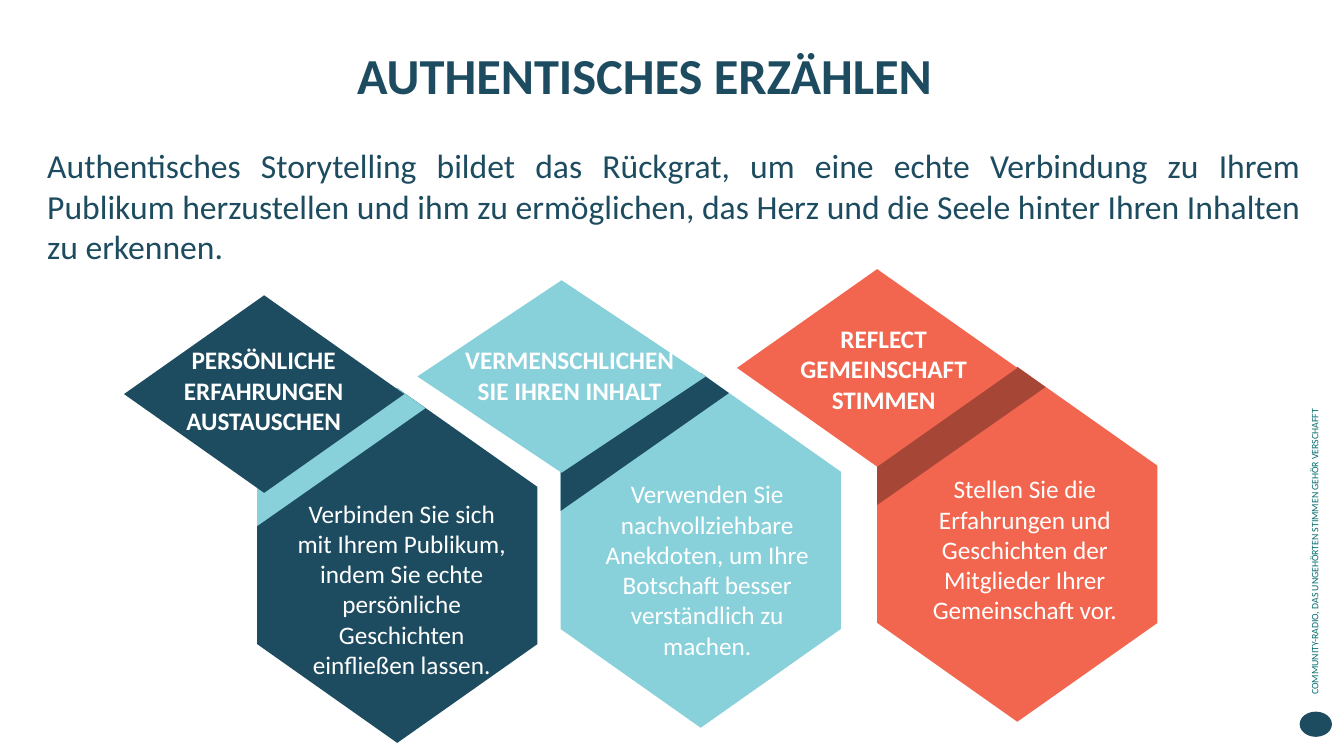
from dataclasses import dataclass

from pptx import Presentation
from pptx.dml.color import RGBColor
from pptx.enum.shapes import MSO_SHAPE as Preset
from pptx.enum.text import MSO_ANCHOR as Anchor, MSO_AUTO_SIZE as AutoSize, PP_ALIGN as Align
from pptx.util import Inches, Pt


@dataclass(frozen=True)
class Theme:
    font: str = "Calibri"
    navy: str = "1D4C60"
    aqua: str = "88D1DA"
    coral: str = "F26650"
    rust: str = "A54637"
    teal: str = "066C6D"
    white: str = "FFFFFF"
    title_size: int = 36
    intro_size: int = 24
    card_size: int = 18
    motto_size: int = 7


theme = Theme()


def write(shape, text, box, size, color, bold=False, align=Align.CENTER):
    """Place a text shape and format all its paragraphs."""
    for name, value in zip(("left", "top", "width", "height"), box):
        setattr(shape, name, Inches(value))
    frame = shape.text_frame
    frame.text = text
    frame_format = {"word_wrap": True, "auto_size": AutoSize.NONE, "vertical_anchor": Anchor.TOP}
    for name, value in frame_format.items():
        setattr(frame, name, value)
    for paragraph in frame.paragraphs:
        paragraph.alignment = align
        font = paragraph.runs[0].font
        for name, value in {"name": theme.font, "size": Pt(size), "bold": bold}.items():
            setattr(font, name, value)
        font.color.rgb = RGBColor.from_string(color)


def paint(shape, color):
    """Give a shape a flat fill without outline or shadow."""
    shape.shadow.inherit = False
    shape.fill.solid()
    shape.fill.fore_color.rgb = RGBColor.from_string(color)
    shape.line.fill.background()


presentation = Presentation()
presentation.slide_width, presentation.slide_height = Inches(13.33), Inches(7.5)
slide = presentation.slides.add_slide(presentation.slide_layouts[5])
shapes = slide.shapes

# Title and introduction
write(shapes.title, "AUTHENTISCHES ERZÄHLEN", (0.33, 0.39, 12.13, 1.09),
      theme.title_size, theme.navy, bold=True)
write(shapes.add_textbox(0, 0, 0, 0),
      "Authentisches Storytelling bildet das Rückgrat, um eine echte Verbindung zu Ihrem "
      "Publikum herzustellen und ihm zu ermöglichen, das Herz und die Seele hinter Ihren "
      "Inhalten zu erkennen.",
      (0.37, 1.39, 12.63, 0.91), theme.intro_size, theme.navy, align=Align.JUSTIFY)

# Cards: hexagon corner, colours, diamond box, heading and body with their boxes
cards = [
    ((2.55, 3.85), theme.navy, theme.aqua, (1.23, 2.93, 2.78, 1.96),
     "PERSÖNLICHE ERFAHRUNGEN AUSTAUSCHEN", (1.66, 3.37, 1.91, 1.01),
     "Verbinden Sie sich mit Ihrem Publikum, indem Sie echte persönliche Geschichten "
     "einfließen lassen.", (2.77, 4.89, 2.43, 1.92)),
    ((5.56, 3.7), theme.aqua, theme.navy, (4.14, 2.78, 2.86, 1.91),
     "VERMENSCHLICHEN SIE IHREN INHALT", (4.38, 3.37, 2.54, 0.71),
     "Verwenden Sie nachvollziehbare Anekdoten, um Ihre Botschaft besser verständlich "
     "zu machen.", (5.88, 4.7, 2.27, 1.92)),
    ((8.7, 3.64), theme.coral, theme.rust, (7.31, 2.67, 2.78, 1.96),
     "REFLECT\nGEMEINSCHAFT\nSTIMMEN", (7.45, 3.16, 2.63, 1.01),
     "Stellen Sie die Erfahrungen und Geschichten der Mitglieder Ihrer Gemeinschaft vor.",
     (8.98, 4.65, 2.37, 1.62)),
]
hexagon = [(1.39, 0), (0, 0.98), (0, 2.54), (1.39, 3.52), (2.78, 2.54), (2.78, 0.98)]
fold = [(1.39, 0), (0, 0.98), (0, 1.37), (1.67, 0.2)]

for (left, top), color, fold_color, diamond_box, heading, heading_box, body, body_box in cards:
    for outline, fill in ((hexagon, color), (fold, fold_color)):
        points = [(Inches(left + x), Inches(top + y)) for x, y in outline]
        builder = shapes.build_freeform(*points[0])
        builder.add_line_segments(points[1:], close=True)
        paint(builder.convert_to_shape(), fill)
    paint(shapes.add_shape(Preset.DIAMOND, *map(Inches, diamond_box)), color)
    write(shapes.add_textbox(0, 0, 0, 0), heading, heading_box,
          theme.card_size, theme.white, bold=True)
    write(shapes.add_textbox(0, 0, 0, 0), body, body_box, theme.card_size, theme.white)

# Motto along the right edge, with a plain badge below
motto = shapes.add_textbox(0, 0, 0, 0)
write(motto, "COMMUNITY-RADIO, DAS UNGEHÖRTEN STIMMEN GEHÖR VERSCHAFFT",
      (10.81, 4.65, 4.46, 0.22), theme.motto_size, theme.teal, align=Align.LEFT)
motto.rotation = 270
badge = shapes.add_shape(Preset.OVAL, Inches(12.89), Inches(7.06), Inches(0.32), Inches(0.25))
paint(badge, theme.navy)

presentation.save("out.pptx")
